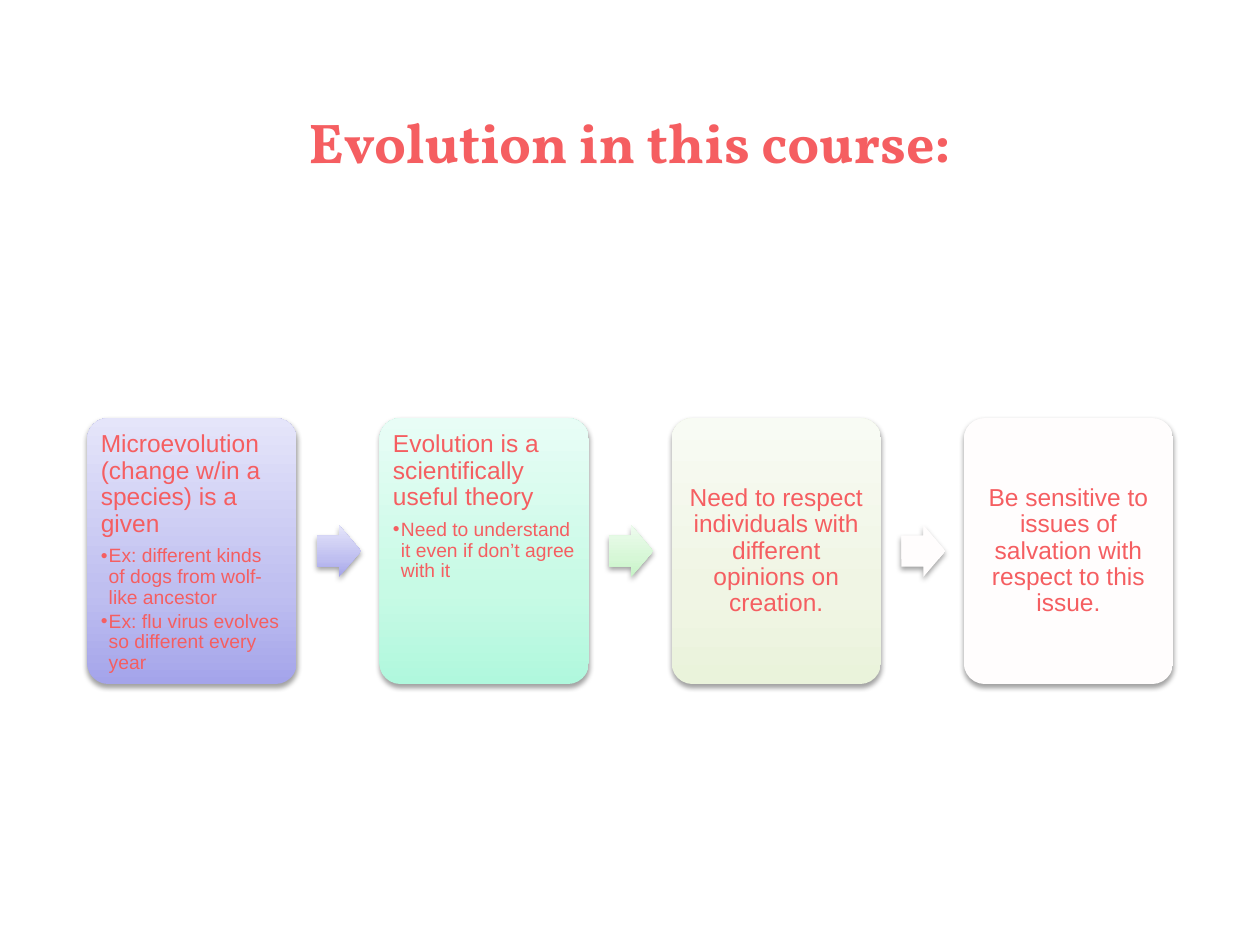
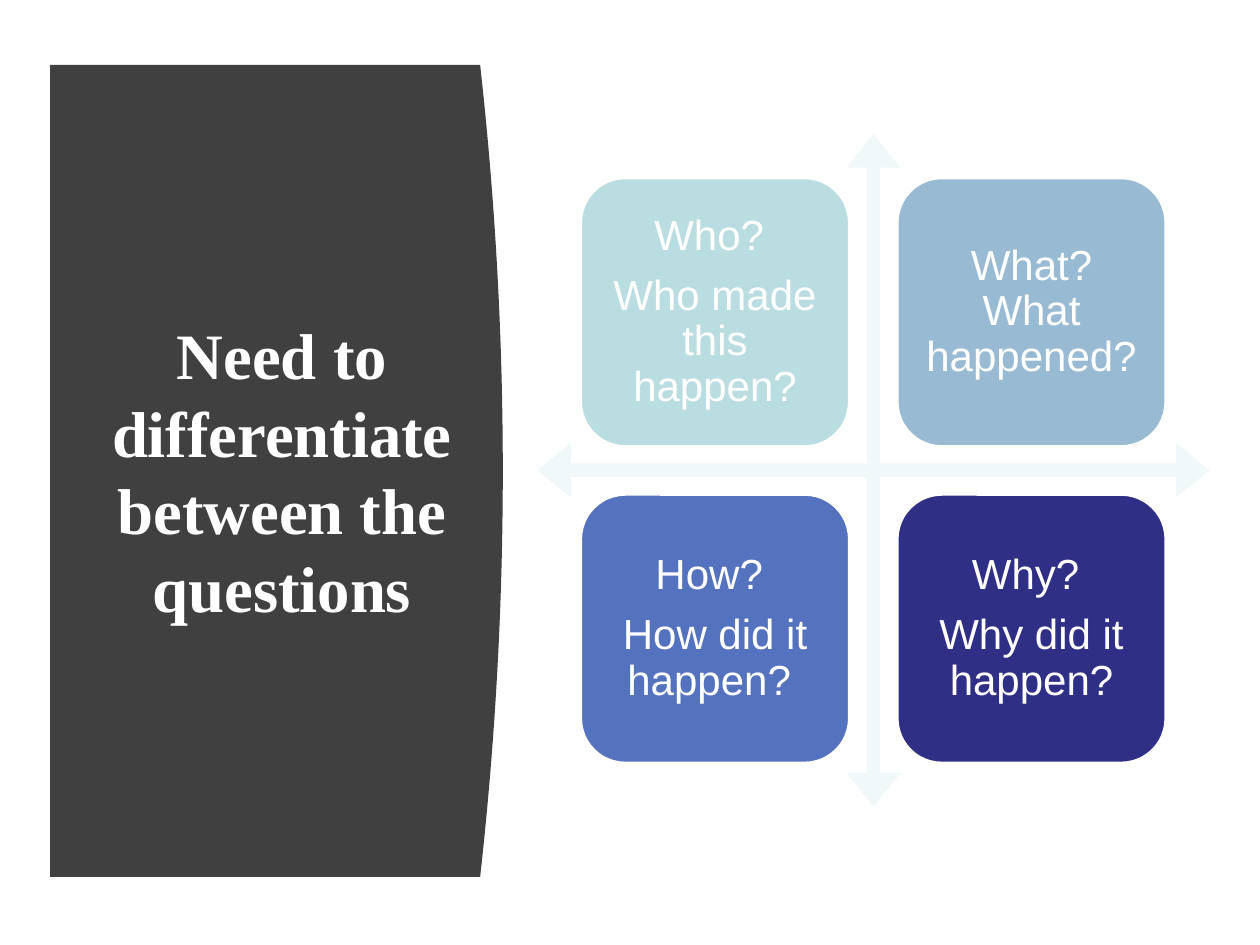
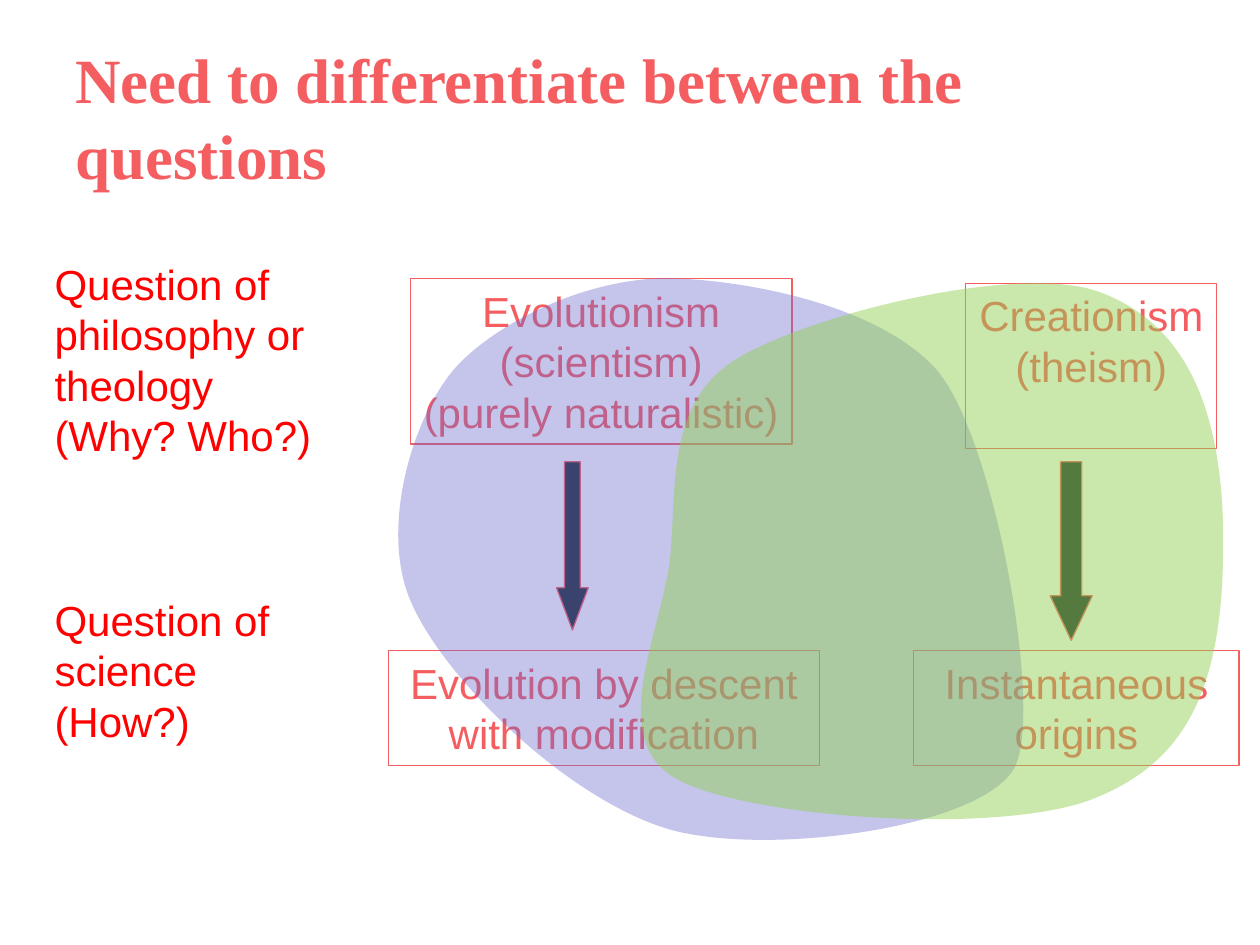
from copy import deepcopy
from dataclasses import dataclass

from lxml import etree
from pptx import Presentation
from pptx.dml.color import RGBColor
from pptx.enum.shapes import MSO_SHAPE
from pptx.enum.text import MSO_ANCHOR, MSO_AUTO_SIZE, PP_ALIGN
from pptx.oxml.ns import qn
from pptx.shapes.autoshape import Shape
from pptx.slide import Slide
from pptx.text.text import TextFrame
from pptx.util import Cm, Pt

ROUNDED, RECT = MSO_SHAPE.ROUNDED_RECTANGLE, MSO_SHAPE.RECTANGLE
RIGHT_ARROW, DOWN_ARROW = MSO_SHAPE.RIGHT_ARROW, MSO_SHAPE.DOWN_ARROW
QUAD_ARROW = MSO_SHAPE.QUAD_ARROW
TOP, MIDDLE = MSO_ANCHOR.TOP, MSO_ANCHOR.MIDDLE
LEFT, CENTER = PP_ALIGN.LEFT, PP_ALIGN.CENTER
NO_AUTOFIT = MSO_AUTO_SIZE.NONE

CORAL = RGBColor(0xF5, 0x5E, 0x61)
RED = RGBColor(0xFF, 0x00, 0x00)
WHITE = RGBColor(0xFF, 0xFF, 0xFF)
CHARCOAL = RGBColor(0x40, 0x40, 0x40)
INK = RGBColor(0x1E, 0x2D, 0x31)
PALE_BLUE = RGBColor(0xF1, 0xF8, 0xF9)
AQUA = RGBColor(0xBA, 0xDD, 0xE1)
SKY = RGBColor(0x98, 0xBB, 0xD3)
BLUE = RGBColor(0x54, 0x72, 0xBD)
NAVY = RGBColor(0x2F, 0x2F, 0x86)
VIOLET = RGBColor(0x68, 0x68, 0xCF)
GREEN = RGBColor(0x92, 0xD0, 0x50)

BODY_FONT, SERIF_FONT, HEADING_FONT = "Arial", "Times New Roman", "Vollkorn"

Gradient = tuple[RGBColor, RGBColor, RGBColor]
Box = tuple[float, float, float, float]
Point = tuple[float, float]


def shades(*codes: str) -> Gradient:
    return tuple(RGBColor.from_string(code) for code in codes)


LILAC_SHADES = shades("A4A4EA", "BFBFF0", "E5E5FA")
MINT_SHADES = shades("B0F8DD", "C7FAE5", "E8FDF6")
LEAF_SHADES = shades("C6F3C6", "D6F7D6", "EEFBEE")
OLIVE_SHADES = shades("EAF3DB", "F0F5E4", "F8FBF4")
SNOW_SHADES = shades("FFFDFD", "FFFDFD", "FFFFFF")
GRADIENT_POSITIONS = (0, 0.35, 1)


@dataclass
class Step:
    text: str
    shades: Gradient
    bullets: tuple[str, ...] = ()
    arrow_shades: Gradient | None = None


@dataclass
class Question:
    lines: tuple[str, ...]
    color: RGBColor


@dataclass
class Label:
    box: Box
    lines: tuple[str, ...]
    framed: bool = True


@dataclass
class Outline:
    """A closed outline; a segment has one point (line) or three (curve)."""
    box: Box
    start: Point
    segments: list[tuple[Point, ...]]
    color: RGBColor
    opacity: int = 100


STEPS = [
    Step("Microevolution (change w/in a species) is a given", LILAC_SHADES,
         ("Ex: different kinds of dogs from wolf-like ancestor",
          "Ex: flu virus evolves so different every year"), LILAC_SHADES),
    Step("Evolution is a scientifically useful theory", MINT_SHADES,
         ("Need to understand it even if don’t agree with it",), LEAF_SHADES),
    Step("Need to respect individuals with different opinions on creation.",
         OLIVE_SHADES, arrow_shades=SNOW_SHADES),
    Step("Be sensitive to issues of salvation with respect to this issue.",
         SNOW_SHADES),
]

QUESTIONS = [
    Question(("Who? ", "Who made this happen?"), AQUA),
    Question(("What? What happened?",), SKY),
    Question(("How? ", "How did it happen? "), BLUE),
    Question(("Why? ", "Why did it happen?"), NAVY),
]

LABELS = [
    Label((8.27, 5.62, 7.7, 3.33),
          ("Evolutionism", "(scientism)", "(purely naturalistic)")),
    Label((19.47, 5.71, 5.06, 3.33), ("Creationism", "(theism)")),
    Label((0.85, 5.08, 6.17, 4.32),
          ("Question of philosophy or theology", "(Why? Who?)"), framed=False),
    Label((7.83, 13.12, 8.69, 2.31), ("Evolution by descent with modification",)),
    Label((18.42, 13.12, 6.56, 2.31), ("Instantaneous", "origins")),
    Label((0.85, 11.85, 6.17, 3.3), ("Question of science", "(How?)"), framed=False),
]

DOWN_ARROWS = [
    ((11.22, 9.31, 0.64, 3.39), (0.5, 1.33)),
    ((21.17, 9.31, 0.85, 3.6), (0.5, 1.06)),
]

PANEL = Outline((1.01, 1.31, 9.13, 16.37), (1.01, 1.31), [
    ((9.68, 1.31),),
    ((10.29, 6.77), (10.29, 12.22), (9.68, 17.68)),
    ((1.01, 17.68),),
], CHARCOAL)

BLOBS = [
    Outline((8.03, 5.61, 12.6, 11.3), (8.31, 12.19), [
        ((7.59, 10.64), (8.38, 8.23), (9.25, 7.34)),
        ((10.11, 6.45), (11.86, 5.61), (13.46, 5.61)),
        ((15.06, 5.64), (17.68, 6.15), (18.85, 7.42)),
        ((20.02, 8.69), (21.03, 14.22), (20.47, 15.44)),
        ((19.89, 16.66), (15.6, 17.27), (13.56, 16.74)),
        ((11.53, 16.18), (9.02, 13.77), (8.31, 12.19)),
    ], VIOLET, 38),
    Outline((12.93, 5.72, 11.73, 10.8), (13.49, 11.4), [
        ((13.67, 10.01), (13.36, 8.18), (14.81, 7.26)),
        ((16.26, 6.35), (20.55, 5.28), (22.17, 5.89)),
        ((23.83, 6.5), (24.66, 8.13), (24.66, 10.92)),
        ((24.66, 13.74), (24, 15.27), (22.17, 16.05)),
        ((20.35, 16.87), (15.14, 16.51), (13.67, 15.72)),
        ((12.22, 14.96), (13.28, 12.83), (13.49, 11.4)),
    ], GREEN, 48),
]


def write(tf: TextFrame, text: str, *, size: float, color: RGBColor,
          font: str = BODY_FONT, bold: bool = False, align: PP_ALIGN = LEFT,
          spacing: float = 1.0, before: float = 0, bullet: bool = False) -> None:
    """Add one paragraph, using the first one while the frame is empty."""
    p = tf.add_paragraph() if tf.text else tf.paragraphs[0]
    p.alignment, p.line_spacing, p.space_before = align, spacing, Pt(before)
    r = p.add_run()
    r.text = text
    r.font.name, r.font.size, r.font.bold = font, Pt(size), bold
    r.font.color.rgb = color
    if bullet:
        p.level = 1
        pPr = p._p.get_or_add_pPr()
        pPr.set("marL", str(Cm(0.16)))
        pPr.set("indent", str(Cm(-0.2)))
        etree.SubElement(pPr, qn("a:buFont"), typeface=font)
        etree.SubElement(pPr, qn("a:buChar"), char="•")


def set_frame(tf: TextFrame, anchor: MSO_ANCHOR, margin_x: float = 0.25,
              margin_y: float = 0.13) -> None:
    tf.word_wrap, tf.auto_size, tf.vertical_anchor = True, NO_AUTOFIT, anchor
    tf.margin_left = tf.margin_right = Cm(margin_x)
    tf.margin_top = tf.margin_bottom = Cm(margin_y)


def add_titled_slide(prs: Presentation, title: str, box: Box, *, size: float,
                     font: str = SERIF_FONT, color: RGBColor = CORAL,
                     align: PP_ALIGN = CENTER) -> Slide:
    s = prs.slides.add_slide(prs.slide_layouts[5])
    sp = s.shapes.title
    sp.left, sp.top, sp.width, sp.height = map(Cm, box)
    set_frame(sp.text_frame, MIDDLE)
    write(sp.text_frame, title, size=size, font=font, color=color, bold=True,
          align=align)
    return s


def style(sp: Shape, fill: RGBColor | None, line: RGBColor | None = None,
          width: float = 0.75) -> None:
    sp.shadow.inherit = False
    if fill is None:
        sp.fill.background()
    else:
        sp.fill.solid()
        sp.fill.fore_color.rgb = fill
    if line is None:
        sp.line.fill.background()
    else:
        sp.line.color.rgb = line
        sp.line.width = Pt(width)


def add_shape(s: Slide, kind: MSO_SHAPE, box: Box, fill: RGBColor | None = None,
              line: RGBColor | None = None, width: float = 0.75,
              adjust: tuple[float, ...] = ()) -> Shape:
    sp = s.shapes.add_shape(kind, *map(Cm, box))
    for i, value in enumerate(adjust):
        sp.adjustments[i] = value
    style(sp, fill, line, width)
    return sp


def add_raised_shape(s: Slide, kind: MSO_SHAPE, box: Box, colors: Gradient,
                     adjust: tuple[float, ...]) -> Shape:
    """Add a shape with an upward three-stop gradient and a soft shadow."""
    sp = add_shape(s, kind, box, adjust=adjust)
    sp.fill.gradient()
    sp.fill.gradient_angle = 90
    stop_list = sp._element.spPr.find(f".//{qn('a:gsLst')}")
    stop_list.insert(1, deepcopy(stop_list[0]))
    for stop, color, position in zip(sp.fill.gradient_stops, colors,
                                     GRADIENT_POSITIONS):
        stop.color.rgb, stop.position = color, position
    effects = sp._element.spPr.find(qn("a:effectLst"))
    shadow = etree.SubElement(effects, qn("a:outerShdw"), blurRad=str(Pt(3.1)),
                              dist=str(Pt(1.6)), dir="5400000", rotWithShape="0")
    black = etree.SubElement(shadow, qn("a:srgbClr"), val="000000")
    etree.SubElement(black, qn("a:alpha"), val="37000")
    return sp


def add_outline(s: Slide, outline: Outline) -> Shape:
    """Build a freeform through the anchors, then bend its curved segments."""
    left, top, width, height = map(Cm, outline.box)
    builder = s.shapes.build_freeform(*map(Cm, outline.start))
    builder.add_line_segments([tuple(map(Cm, segment[-1]))
                               for segment in outline.segments], close=True)
    sp = builder.convert_to_shape()
    sp.left, sp.top, sp.width, sp.height = left, top, width, height
    route = sp._element.spPr.find(f".//{qn('a:pathLst')}")[0]
    route.set("w", str(width))
    route.set("h", str(height))
    for step, points in zip(list(route), [(outline.start,), *outline.segments]):
        tag = "a:cubicBezTo" if len(points) == 3 else step.tag
        new_step = etree.Element(qn(tag) if tag.startswith("a:") else tag)
        for x, y in points:
            etree.SubElement(new_step, qn("a:pt"), x=str(Cm(x) - left),
                             y=str(Cm(y) - top))
        route.replace(step, new_step)
    style(sp, outline.color)
    if outline.opacity < 100:
        color = sp._element.spPr.find(f"{qn('a:solidFill')}/{qn('a:srgbClr')}")
        etree.SubElement(color, qn("a:alpha"), val=str(outline.opacity * 1000))
    return sp


def add_step(s: Slide, step: Step, left: float) -> None:
    card = add_raised_shape(s, ROUNDED, (left, 8.43, 4.22, 5.36), step.shades, (0.1,))
    tf = card.text_frame
    set_frame(tf, TOP if step.bullets else MIDDLE, 0.15, 0.15)
    write(tf, step.text, size=14, color=CORAL, spacing=0.9,
          align=LEFT if step.bullets else CENTER)
    for i, bullet in enumerate(step.bullets):
        write(tf, bullet, size=11, color=CORAL, spacing=0.9,
              before=1.6 if i else 4.9, bullet=True)
    if step.arrow_shades:
        add_raised_shape(s, RIGHT_ARROW, (left + 4.63, 10.59, 0.89, 1.04),
                         step.arrow_shades, (0.6, 0.5))


def build_course_slide(prs: Presentation) -> None:
    s = add_titled_slide(prs, "Evolution in this course:", (1.75, 1.01, 21.9, 3.67),
                         size=32, font=HEADING_FONT)
    for i, step in enumerate(STEPS):
        add_step(s, step, 1.76 + 5.89 * i)


def build_questions_slide(prs: Presentation, title: str) -> None:
    s = add_titled_slide(prs, title, (1.8, 2.82, 7.77, 13.31), size=37, color=WHITE)
    panel = add_outline(s, PANEL)
    s.shapes.title._element.addprevious(panel._element)

    add_shape(s, QUAD_ARROW, (10.83, 2.7, 13.56, 13.56), PALE_BLUE,
              adjust=(0.02, 0.04, 0.05))
    for i, question in enumerate(QUESTIONS):
        row, column = divmod(i, 2)
        tile = add_shape(s, ROUNDED,
                         (11.7 + 6.38 * column, 3.58 + 6.38 * row, 5.43, 5.43),
                         question.color, WHITE, 2, (0.167,))
        set_frame(tile.text_frame, MIDDLE, 0.25, 0.25)
        for j, line in enumerate(question.lines):
            write(tile.text_frame, line, size=24, color=WHITE, align=CENTER,
                  spacing=0.9, before=8.4 * j)


def build_overlap_slide(prs: Presentation, title: str) -> None:
    s = add_titled_slide(prs, title, (1.27, 0.76, 22.86, 3.18), size=36, align=LEFT)
    for label in LABELS:
        if label.framed:
            sp = add_shape(s, RECT, label.box, line=CORAL)
        else:
            sp = s.shapes.add_textbox(*map(Cm, label.box))
        set_frame(sp.text_frame, TOP)
        for line in label.lines:
            write(sp.text_frame, line, size=24, color=CORAL if label.framed else RED,
                  align=CENTER if label.framed else LEFT)
    for box, adjust in DOWN_ARROWS:
        add_shape(s, DOWN_ARROW, box, INK, CORAL, adjust=adjust)
    for blob in BLOBS:
        add_outline(s, blob)


def main() -> None:
    prs = Presentation()
    prs.slide_width, prs.slide_height = Cm(25.4), Cm(19.05)
    question_title = "Need to differentiate between the questions"
    build_course_slide(prs)
    build_questions_slide(prs, question_title)
    build_overlap_slide(prs, question_title)
    prs.save("out.pptx")


if __name__ == "__main__":
    main()
